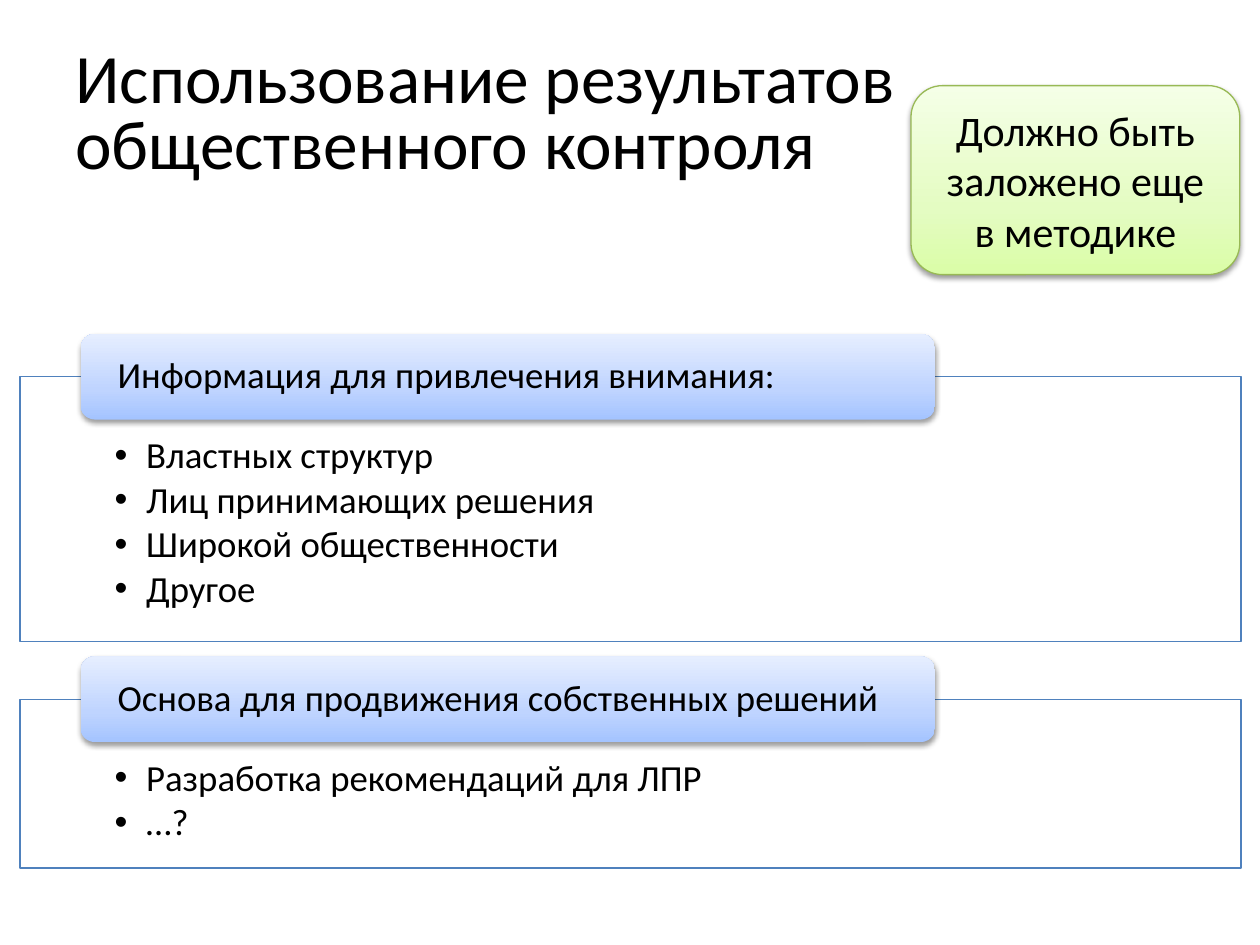
from lxml.etree import SubElement
from pptx import Presentation
from pptx.dml.color import RGBColor
from pptx.enum.shapes import MSO_SHAPE
from pptx.enum.text import MSO_ANCHOR, PP_ALIGN
from pptx.oxml.ns import qn
from pptx.util import Inches, Pt

RECT, ROUND = MSO_SHAPE.RECTANGLE, MSO_SHAPE.ROUNDED_RECTANGLE
TOP, MIDDLE = MSO_ANCHOR.TOP, MSO_ANCHOR.MIDDLE
LEFT, CENTER = PP_ALIGN.LEFT, PP_ALIGN.CENTER

TITLE = "Использование результатов общественного контроля"
NOTE = "Должно быть заложено еще в методике"
BLOCKS = [
    ("Информация для привлечения внимания:", 2.1,
     ["Властных структур", "Лиц принимающих решения",
      "Широкой общественности", "Другое"]),
    ("Основа для продвижения собственных решений", 1.34,
     ["Разработка рекомендаций для ЛПР", "…?"]),
]

THEME = {
    "font": "Calibri", "text": "000000", "back": "FFFFFF",
    "frame": "4F81BD", "rim": "98B955",
    "blue": [(0, "A4C4FF"), (35, "BFD4FF"), (100, "E6EEFF")],
    "green": [(0, "DAFDA7"), (35, "E4FCC2"), (100, "F5FFE7")],
    "title": 39.6, "note": 24, "body": 21,
}

BOX_X, BOX_Y, BOX_W, BOX_GAP = 0.16, 2.99, 9.69, 0.46
BAR_X, BAR_W, BAR_H = 0.64, 6.78, 0.68


def node(parent, tag, **attrs):
    return SubElement(parent, qn(tag), attrs)


def rgb(name):
    return RGBColor.from_string(THEME[name])


def write(shape, lines, size, pad, anchor=MIDDLE, align=LEFT, lead=0.9,
          bullet=False):
    frame = shape.text_frame
    frame.word_wrap = True
    frame.vertical_anchor = anchor
    (frame.margin_left, frame.margin_top,
     frame.margin_right, frame.margin_bottom) = map(Inches, pad)
    for i, line in enumerate(lines):
        para = frame.add_paragraph() if i else frame.paragraphs[0]
        para.text = line
        para.alignment = align
        para.line_spacing = lead
        para.font.name = THEME["font"]
        para.font.size = Pt(THEME[size])
        para.font.color.rgb = rgb("text")
        if bullet:
            para.space_after = Pt(2.7)
            props = para._p.get_or_add_pPr()
            props.set("marL", str(Inches(0.25)))
            props.set("indent", str(Inches(-0.25)))
            node(props, "a:buFont", typeface="Arial")
            node(props, "a:buChar", char="•")


def draw(slide, kind, area, line=None):
    shape = slide.shapes.add_shape(kind, *map(Inches, area))
    shape.shadow.inherit = False
    if line:
        shape.line.color.rgb = rgb(line)
        shape.line.width = Pt(0.75)
    else:
        shape.line.fill.background()
    return shape


def panel(slide, area):
    shape = draw(slide, RECT, area, "frame")
    shape.fill.solid()
    shape.fill.fore_color.rgb = rgb("back")
    color = shape._element.spPr.find(".//" + qn("a:srgbClr"))
    node(color, "a:alpha", val="90000")
    return shape


def card(slide, area, stops, line=None):
    shape = draw(slide, ROUND, area, line)
    shape.fill.gradient()
    shape.fill.gradient_angle = 90
    props = shape._element.spPr
    ramp = props.find(".//" + qn("a:gsLst"))
    for old in list(ramp):
        ramp.remove(old)
    for place, color in THEME[stops]:
        stop = node(ramp, "a:gs", pos=str(place * 1000))
        node(stop, "a:srgbClr", val=color)
    shade = node(props.find(qn("a:effectLst")), "a:outerShdw",
                 blurRad=str(Pt(3.1)), dist=str(Pt(1.6)), dir="5400000",
                 rotWithShape="0")
    color = node(shade, "a:srgbClr", val="000000")
    node(color, "a:alpha", val="38000")
    return shape


def main():
    deck = Presentation()
    deck.slide_width, deck.slide_height = Inches(10), Inches(7.5)
    slide = deck.slides.add_slide(deck.slide_layouts[6])

    title = slide.shapes.add_textbox(*map(Inches, (0.5, 0.3, 9, 1.25)))
    write(title, [TITLE], "title", (0.1, 0.05, 0.1, 0.05), lead=0.8)

    top = BOX_Y
    for head, height, items in BLOCKS:
        box = panel(slide, (BOX_X, top, BOX_W, height))
        write(box, items, "body", (0.75, 0.48, 0.75, 0.16), TOP, bullet=True)
        bar = card(slide, (BAR_X, top - BAR_H / 2, BAR_W, BAR_H), "blue")
        write(bar, [head], "body", (0.26, 0, 0.26, 0))
        top += height + BOX_GAP

    note = card(slide, (7.23, 0.68, 2.61, 1.5), "green", "rim")
    write(note, [NOTE], "note", (0.1, 0.05, 0.1, 0.05), align=CENTER, lead=1.0)
    deck.save("out.pptx")


if __name__ == "__main__":
    main()
